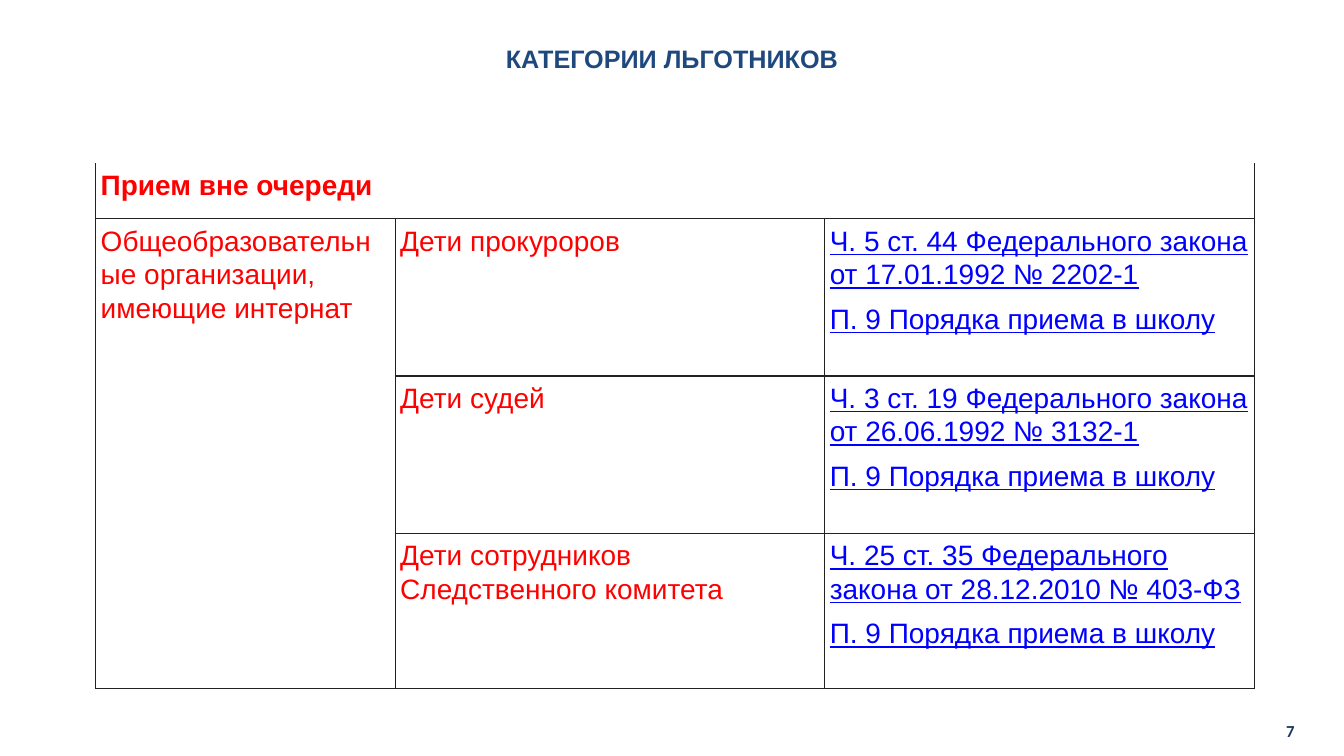
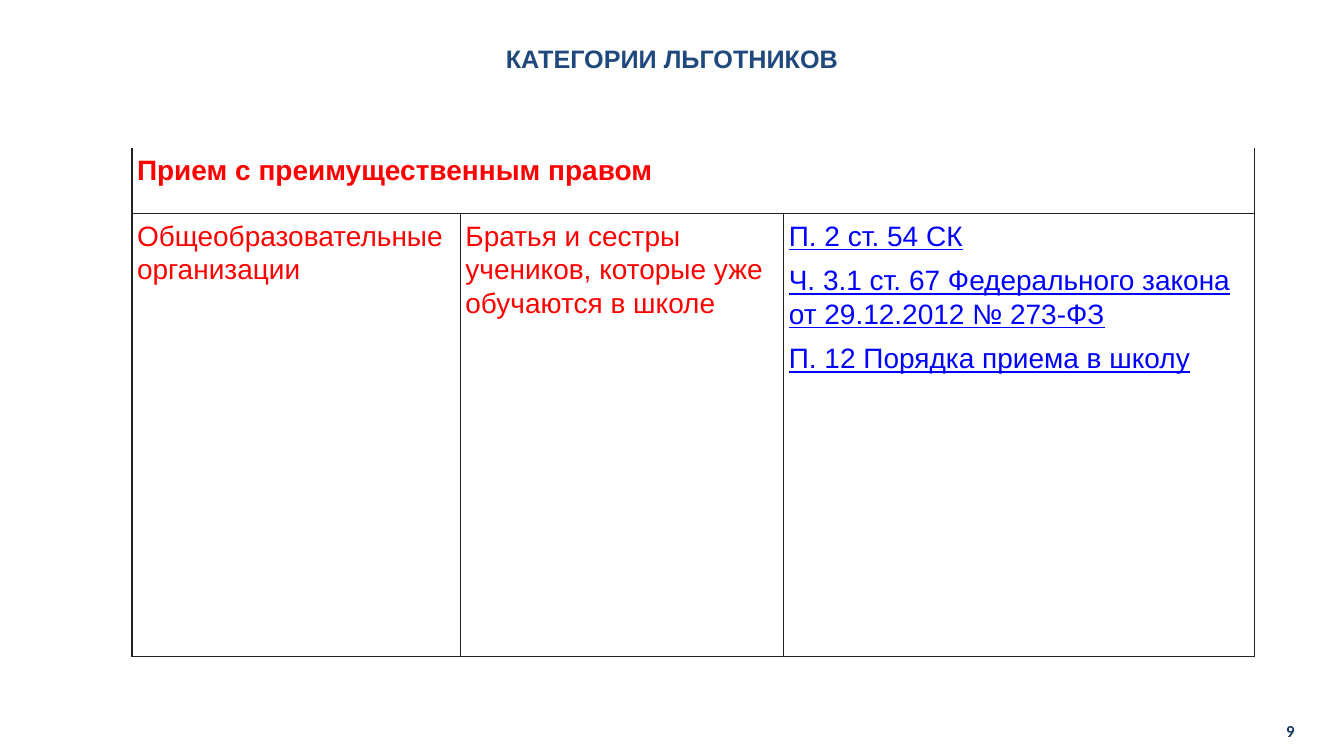
"""Build two slides of admission privileges, each a bordered table under a shared title."""
from dataclasses import dataclass

from lxml import etree
from pptx import Presentation
from pptx.dml.color import RGBColor
from pptx.enum.text import MSO_ANCHOR, PP_ALIGN
from pptx.oxml.ns import qn
from pptx.util import Inches, Pt

CENTER, LEFT, RIGHT = PP_ALIGN.CENTER, PP_ALIGN.LEFT, PP_ALIGN.RIGHT
TOP, MIDDLE = MSO_ANCHOR.TOP, MSO_ANCHOR.MIDDLE
BLANK_LAYOUT = 6


@dataclass(frozen=True)
class Theme:
    width: float = 13.34
    height: float = 7.5
    title_color: str = "1F497D"
    number_color: str = "17375E"
    text_color: str = "FF0000"
    law_color: str = "0000FF"
    border_color: str = "222222"
    border_width: float = 1
    title_size: int = 18
    number_size: int = 12
    table_size: int = 20
    font: str = "Arial"
    number_font: str = "Calibri"
    cell_margin: float = 0.05
    line_spacing: float = 1.07
    space_after: int = 8
    table_right: float = 93.33


THEME = Theme()
TITLE = "КАТЕГОРИИ ЛЬГОТНИКОВ"
SCHOOL_RULE = "П. 9 Порядка приема в школу"


def across(percent):
    return Inches(THEME.width * percent / 100)


def down(percent):
    return Inches(THEME.height * percent / 100)


def share_out(total, weights):
    return [round(total * weight / sum(weights)) for weight in weights]


def write(frame, lines, *, size, color, font=THEME.font, bold=False, underline=False,
          align=LEFT, line_spacing=None, space_after=0):
    frame.word_wrap = True
    for index, line in enumerate(lines):
        para = frame.paragraphs[0] if index == 0 else frame.add_paragraph()
        para.alignment = align
        para.line_spacing = line_spacing
        para.space_after = Pt(space_after)
        span = para.add_run()
        span.text = line
        span.font.name = font
        span.font.size = Pt(size)
        span.font.bold = bold
        span.font.underline = underline
        span.font.color.rgb = RGBColor.from_string(color)


def set_margins(target, horizontal, vertical):
    target.margin_left = target.margin_right = Inches(horizontal)
    target.margin_top = target.margin_bottom = Inches(vertical)


def add_label(page, text, left, top, width, height, *, margins, anchor=TOP, **style):
    box = page.shapes.add_textbox(across(left), down(top), across(width), down(height))
    set_margins(box.text_frame, *margins)
    box.text_frame.vertical_anchor = anchor
    write(box.text_frame, [text], **style)


def set_borders(cell, hidden=()):
    properties = cell._tc.get_or_add_tcPr()
    for side in ("lnL", "lnR", "lnT", "lnB"):
        line = etree.SubElement(properties, qn(f"a:{side}"), w=str(Pt(THEME.border_width)))
        if side in hidden:
            etree.SubElement(line, qn("a:noFill"))
        else:
            fill = etree.SubElement(line, qn("a:solidFill"))
            etree.SubElement(fill, qn("a:srgbClr"), val=THEME.border_color)


def fill_cell(cell, lines, **style):
    write(cell.text_frame, lines, size=THEME.table_size, line_spacing=THEME.line_spacing,
          space_after=THEME.space_after, **style)


def add_privileges(page, left, top, height, column_weights, row_weights,
                   heading, school, privileges):
    width = THEME.table_right - left
    table = page.shapes.add_table(
        len(row_weights), len(column_weights),
        across(left), down(top), across(width), down(height)).table
    table.first_row = table.horz_banding = False
    for column, size in zip(table.columns, share_out(across(width), column_weights)):
        column.width = size
    for row, size in zip(table.rows, share_out(down(height), row_weights)):
        row.height = size
    for row_index, row in enumerate(table.rows):
        for cell in row.cells:
            set_borders(cell, hidden=("lnT",) if row_index == 0 else ())
            cell.fill.background()
            set_margins(cell, THEME.cell_margin, THEME.cell_margin)

    table.cell(0, 0).merge(table.cell(0, 2))
    if len(privileges) > 1:
        table.cell(1, 0).merge(table.cell(len(privileges), 0))
    fill_cell(table.cell(0, 0), [heading], color=THEME.text_color, bold=True)
    fill_cell(table.cell(1, 0), [school], color=THEME.text_color)
    for row_index, (children, laws) in enumerate(privileges, start=1):
        fill_cell(table.cell(row_index, 1), [children], color=THEME.text_color)
        fill_cell(table.cell(row_index, 2), laws, color=THEME.law_color, underline=True)


def add_page(deck, number):
    page = deck.slides.add_slide(deck.slide_layouts[BLANK_LAYOUT])
    add_label(page, TITLE, 0, 4.8, 100, 5.87, margins=(0.13, 0.07), align=CENTER,
              size=THEME.title_size, color=THEME.title_color, bold=True)
    add_label(page, str(number), 89.36, 94, 7.87, 5.33, margins=(0.12, 0.06),
              anchor=MIDDLE, align=RIGHT, size=THEME.number_size,
              color=THEME.number_color, font=THEME.number_font, bold=True)
    return page


def main():
    deck = Presentation()
    deck.slide_width, deck.slide_height = across(100), down(100)

    add_privileges(
        add_page(deck, 7), 7.12, 21.6, 69.47, (2.97, 4.26, 4.26), (0.55, 1.56, 1.56, 1.54),
        "Прием вне очереди",
        "Общеобразовательные организации, имеющие интернат",
        [("Дети прокуроров",
          ["Ч. 5 ст. 44 Федерального закона от 17.01.1992 № 2202-1", SCHOOL_RULE]),
         ("Дети судей",
          ["Ч. 3 ст. 19 Федерального закона от 26.06.1992 № 3132-1", SCHOOL_RULE]),
         ("Дети сотрудников Следственного комитета",
          ["Ч. 25 ст. 35 Федерального закона от 28.12.2010 № 403-ФЗ", SCHOOL_RULE])])

    add_privileges(
        add_page(deck, 9), 9.82, 19.6, 67.2, (3.26, 3.21, 4.67), (0.65, 4.39),
        "Прием с преимущественным правом",
        "Общеобразовательные организации",
        [("Братья и сестры учеников, которые уже обучаются в школе",
          ["П. 2 ст. 54 СК",
           "Ч. 3.1 ст. 67 Федерального закона от 29.12.2012 № 273-ФЗ",
           "П. 12 Порядка приема в школу"])])

    deck.save("out.pptx")


if __name__ == "__main__":
    main()
